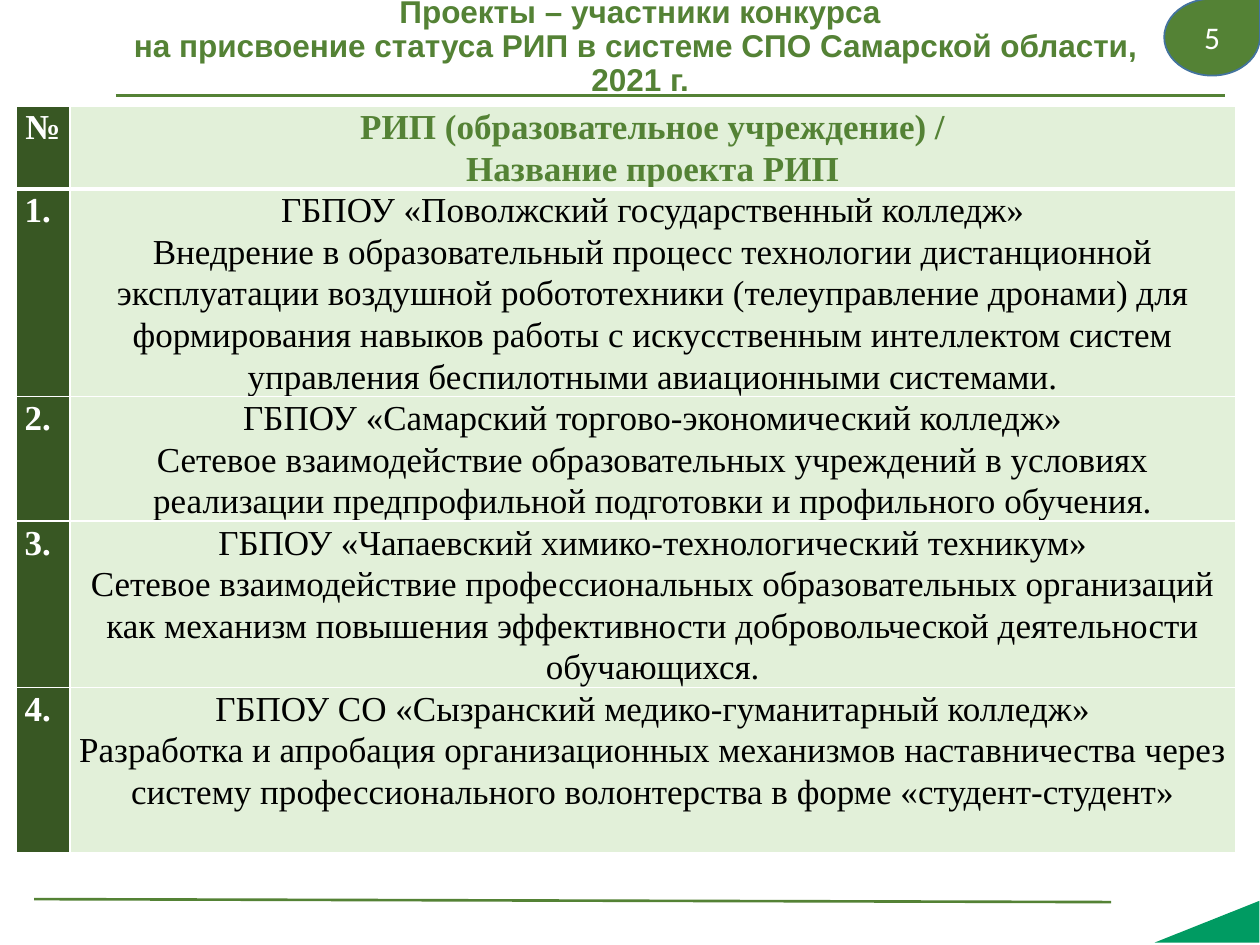
"""Build the slide listing the projects that compete for RIP status."""
from dataclasses import dataclass

from lxml.etree import SubElement
from pptx import Presentation
from pptx.dml.color import RGBColor
from pptx.enum.shapes import MSO_CONNECTOR as Connector, MSO_SHAPE as Preset
from pptx.enum.text import MSO_ANCHOR as Anchor, MSO_AUTO_SIZE as AutoSize, PP_ALIGN as Align
from pptx.oxml.ns import qn
from pptx.util import Pt

GREEN, DARK, PALE, WHITE, BLACK = "548235", "385723", "E2F0D9", "FFFFFF", "000000"
LINE_HEIGHT = 23.6
COLUMN_WIDTHS = (31, 666)


@dataclass
class Row:
    number: str
    school: str
    project: str
    lines: int


@dataclass
class Rule:
    x1: float
    y1: float
    x2: float
    y2: float


ROWS = [
    Row("№", "РИП (образовательное учреждение) /", "Название проекта РИП", 2),
    Row("1.", "ГБПОУ «Поволжский государственный колледж»",
        "Внедрение в образовательный процесс технологии дистанционной эксплуатации воздушной "
        "робототехники (телеуправление дронами) для формирования навыков работы с искусственным "
        "интеллектом систем управления беспилотными авиационными системами.", 5),
    Row("2.", "ГБПОУ «Самарский торгово-экономический колледж»",
        "Сетевое взаимодействие образовательных учреждений в условиях реализации "
        "предпрофильной подготовки и профильного обучения.", 3),
    Row("3.", "ГБПОУ «Чапаевский химико-технологический техникум»",
        "Сетевое взаимодействие профессиональных образовательных организаций как механизм "
        "повышения эффективности добровольческой деятельности обучающихся.", 4),
    Row("4.", "ГБПОУ СО «Сызранский медико-гуманитарный колледж»",
        "Разработка и апробация организационных механизмов наставничества через систему "
        "профессионального волонтерства в форме «студент-студент»", 4),
]
RULES = [Rule(66.2, 54.7, 699.8, 54.7), Rule(19.5, 513.8, 635, 515.5)]


def color(value: str) -> RGBColor:
    return RGBColor.from_string(value)


def apply(target, values: dict) -> None:
    for name, value in values.items():
        setattr(target, name, value)


def write(para, text: str, align, font: dict, ink: str, spacing: float = 1.0) -> None:
    para.text = text
    apply(para, {"alignment": align, "line_spacing": spacing, "space_before": Pt(0)})
    for span in para.runs:
        apply(span.font, font)
        span.font.color.rgb = color(ink)


def draw_rule(page, rule: Rule) -> None:
    line = page.shapes.add_connector(
        Connector.STRAIGHT, Pt(rule.x1), Pt(rule.y1), Pt(rule.x2), Pt(rule.y2))
    line.line.width = Pt(1.5)
    line.line.color.rgb = color(GREEN)
    SubElement(line._element.spPr, qn("a:effectLst"))


def draw_shape(page, preset, left: float, top: float, width: float, height: float, fill: str):
    shape = page.shapes.add_shape(preset, Pt(left), Pt(top), Pt(width), Pt(height))
    shape.shadow.inherit = False
    shape.fill.solid()
    shape.fill.fore_color.rgb = color(fill)
    shape.line.fill.background()
    return shape


def draw_title(page) -> None:
    title = page.shapes.title
    apply(title, {"left": Pt(40.3), "top": Pt(2.9), "width": Pt(651), "height": Pt(48.2)})
    frame = title.text_frame
    apply(frame, {"auto_size": AutoSize.NONE, "word_wrap": True, "vertical_anchor": Anchor.MIDDLE})
    write(frame.paragraphs[0],
          """Проекты – участники конкурса
на присвоение статуса РИП в системе СПО Самарской области, 
2021 г.""", Align.CENTER, {"name": "Arial", "size": Pt(18), "bold": True}, GREEN, 0.9)


def draw_borders(cell, top: float, bottom: float) -> None:
    properties = cell._tc.get_or_add_tcPr()
    sides = {"lnL": 1, "lnR": 1, "lnT": top, "lnB": bottom}
    for index, (side, width) in enumerate(sides.items()):
        border = properties.makeelement(qn(f"a:{side}"), {"w": str(Pt(width))})
        fill = SubElement(border, qn("a:solidFill"))
        SubElement(fill, qn("a:srgbClr"), val=WHITE)
        properties.insert(index, border)


def fill_cell(cell, texts: list[str], align, fill: str, ink: str, bold: bool) -> None:
    apply(cell, {"margin_left": Pt(5), "margin_right": Pt(5), "margin_top": 0, "margin_bottom": 0})
    cell.fill.solid()
    cell.fill.fore_color.rgb = color(fill)
    frame = cell.text_frame
    font = {"name": "Times New Roman", "size": Pt(20), "bold": bold}
    for index, text in enumerate(texts):
        para = frame.add_paragraph() if index else frame.paragraphs[0]
        write(para, text, align, font, ink, 1.07)


def draw_table(page, rows: list[Row]) -> None:
    height = sum(row.lines for row in rows) * LINE_HEIGHT
    frame = page.shapes.add_table(
        len(rows), 2, Pt(9), Pt(60.5), Pt(sum(COLUMN_WIDTHS)), Pt(height))
    table = frame.table
    table.horz_banding = False
    for column, width in zip(table.columns, COLUMN_WIDTHS):
        column.width = Pt(width)
    for index, row in enumerate(rows):
        header = index == 0
        table.rows[index].height = Pt(row.lines * LINE_HEIGHT)
        number, project = table.cell(index, 0), table.cell(index, 1)
        fill_cell(number, [row.number], Align.CENTER if header else Align.JUSTIFY,
                  DARK, WHITE, True)
        fill_cell(project, [row.school, row.project], Align.CENTER,
                  PALE, GREEN if header else BLACK, header)
        for cell in (number, project):
            draw_borders(cell, 3 if index == 1 else 1, 3 if header else 1)


def draw_page_number(page) -> None:
    badge = draw_shape(page, Preset.TEAR, 665.3, -0.7, 54.7, 43.9, GREEN)
    badge.line.color.rgb = color("43739E")
    badge.line.width = Pt(1)
    badge.text_frame.vertical_anchor = Anchor.MIDDLE
    write(badge.text_frame.paragraphs[0], "5", Align.CENTER,
          {"name": "Calibri", "size": Pt(18)}, WHITE)


def main() -> None:
    deck = Presentation()
    apply(deck, {"slide_width": Pt(720), "slide_height": Pt(540)})
    page = deck.slides.add_slide(deck.slide_layouts[5])
    for rule in RULES:
        draw_rule(page, rule)
    corner = draw_shape(page, Preset.RIGHT_TRIANGLE, 677.8, 496.8, 23.8, 59.8, "009B62")
    corner.rotation = 270
    draw_table(page, ROWS)
    draw_title(page)
    draw_page_number(page)
    deck.save("out.pptx")


if __name__ == "__main__":
    main()
